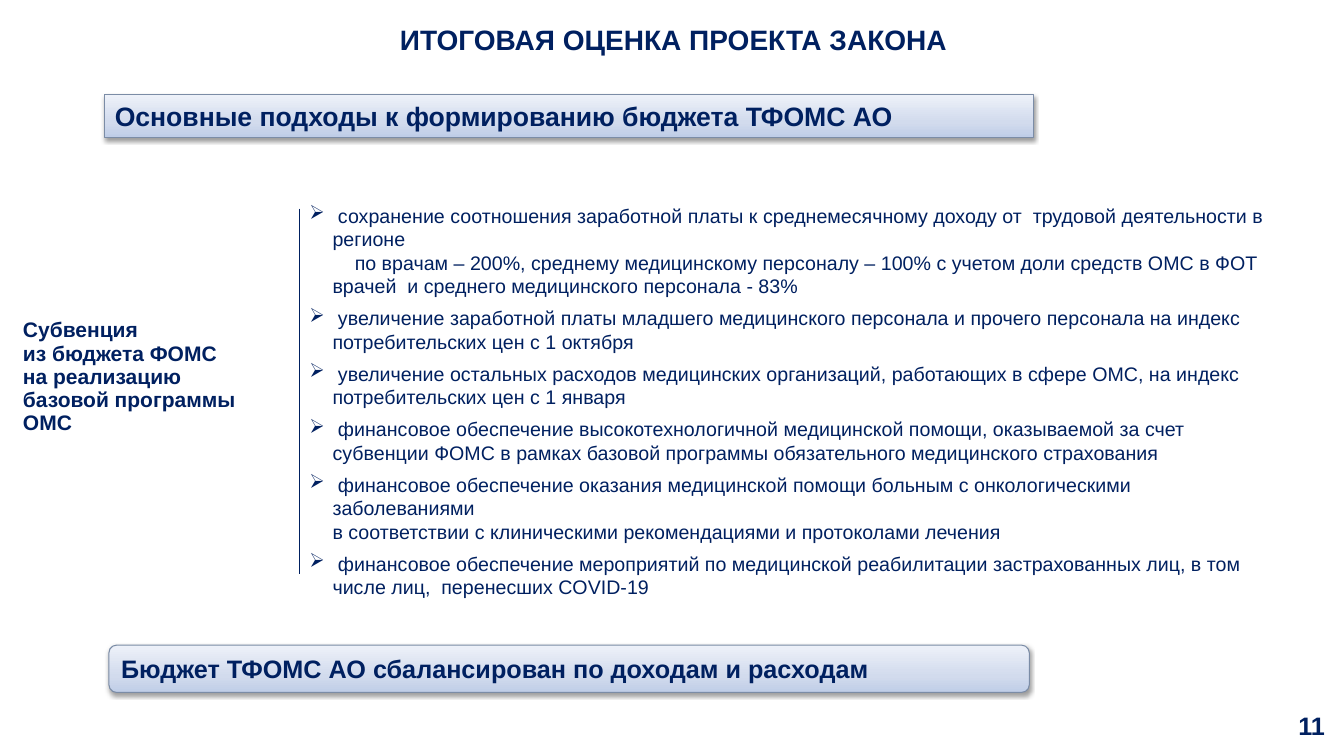
from dataclasses import dataclass

from pptx import Presentation
from pptx.dml.color import RGBColor
from pptx.enum.shapes import MSO_CONNECTOR, MSO_SHAPE
from pptx.enum.text import MSO_ANCHOR, MSO_AUTO_SIZE, PP_ALIGN
from pptx.oxml import parse_xml
from pptx.oxml.ns import nsdecls
from pptx.util import Emu, Pt

PX = 9144  # 100 px to the inch
FONT = "Arial"
NAVY = "002060"
BANNER_EDGE = "7B8CA6"
BANNER_STOPS = ((0, "BFCDE7"), (35, "D2DBED"), (100, "EDF1F9"))
HANG = 23
SUBLINE_TAB = 45


@dataclass(frozen=True)
class Box:
    left: int
    top: int
    width: int
    height: int


@dataclass(frozen=True)
class Label:
    box: Box
    paragraphs: tuple[str, ...]
    size: int
    bold: bool = True
    align: PP_ALIGN = PP_ALIGN.LEFT
    line_spacing: float | None = None
    bulleted: bool = False
    grows: bool = False


@dataclass(frozen=True)
class Banner:
    label: Label
    outline: MSO_SHAPE
    anchor: MSO_ANCHOR


APPROACHES = (
    " сохранение соотношения заработной платы к среднемесячному доходу от  трудовой "
    "деятельности в регионе\n\tпо врачам – 200%, среднему медицинскому персоналу – 100% "
    "с учетом доли средств ОМС в ФОТ врачей  и среднего медицинского персонала - 83%",
    " увеличение заработной платы младшего медицинского персонала и прочего персонала "
    "на индекс потребительских цен с 1 октября",
    " увеличение остальных расходов медицинских организаций, работающих в сфере ОМС, "
    "на индекс потребительских цен с 1 января",
    " финансовое обеспечение высокотехнологичной медицинской помощи, оказываемой за счет "
    "субвенции ФОМС в рамках базовой программы обязательного медицинского страхования",
    " финансовое обеспечение оказания медицинской помощи больным с онкологическими "
    "заболеваниями\nв соответствии с клиническими рекомендациями и протоколами лечения",
    " финансовое обеспечение мероприятий по медицинской реабилитации застрахованных лиц, "
    "в том числе лиц,  перенесших COVID-19",
)
SUBVENTION = ("Субвенция", "из бюджета ФОМС\nна реализацию\nбазовой программы ОМС")

LABELS = (
    Label(Box(68, 21, 1200, 47), ("ИТОГОВАЯ ОЦЕНКА ПРОЕКТА ЗАКОНА",), 20,
          align=PP_ALIGN.CENTER, line_spacing=0.92),
    Label(Box(13, 312, 276, 126), SUBVENTION, 15, line_spacing=0.92, grows=True),
    Label(Box(297, 197, 969, 382), APPROACHES, 14, bold=False, bulleted=True, grows=True),
    Label(Box(1013, 700, 311, 50), ("11",), 18, align=PP_ALIGN.RIGHT),
)
BANNERS = (
    Banner(Label(Box(108, 640, 913, 47),
                 ("Бюджет ТФОМС АО сбалансирован по доходам и расходам",), 18),
           MSO_SHAPE.ROUNDED_RECTANGLE, MSO_ANCHOR.MIDDLE),
    Banner(Label(Box(104, 94, 921, 42),
                 ("Основные подходы к формированию бюджета ТФОМС АО",), 19, grows=True),
           MSO_SHAPE.RECTANGLE, MSO_ANCHOR.TOP),
)


def px(length: int) -> Emu:
    return Emu(length * PX)


def frame(box: Box) -> tuple[Emu, ...]:
    return px(box.left), px(box.top), px(box.width), px(box.height)


def color(value: str) -> RGBColor:
    return RGBColor.from_string(value)


def add_bullet(paragraph) -> None:
    """Hang the paragraph on an arrow bullet, with a tab stop for its sub-line."""
    properties = paragraph._p.get_or_add_pPr()
    properties.set("marL", str(px(HANG)))
    properties.set("indent", str(px(-HANG)))
    properties.append(parse_xml(f'<a:buChar {nsdecls("a")} char="➢"/>'))
    properties.append(parse_xml(
        f'<a:tabLst {nsdecls("a")}><a:tab pos="{px(SUBLINE_TAB)}" algn="l"/></a:tabLst>'))


def write(text_frame, label: Label) -> None:
    text_frame.word_wrap = True
    if label.grows:
        text_frame.auto_size = MSO_AUTO_SIZE.SHAPE_TO_FIT_TEXT
    for number, text in enumerate(label.paragraphs):
        paragraph = text_frame.add_paragraph() if number else text_frame.paragraphs[0]
        paragraph.alignment = label.align
        if label.line_spacing:
            paragraph.line_spacing = label.line_spacing
        if label.bulleted:
            paragraph.space_after = Pt(6)
            add_bullet(paragraph)
        for line_number, line in enumerate(text.split("\n")):
            if line_number:
                paragraph.add_line_break()
            run = paragraph.add_run()
            run.text = line
            run.font.name = FONT
            run.font.size = Pt(label.size)
            run.font.bold = label.bold
            run.font.color.rgb = color(NAVY)


def add_label(slide, label: Label) -> None:
    write(slide.shapes.add_textbox(*frame(label.box)).text_frame, label)


def add_banner(slide, banner: Banner) -> None:
    shape = slide.shapes.add_shape(banner.outline, *frame(banner.label.box))
    shape.fill.gradient()
    shape.fill.gradient_angle = 90
    stops = "".join(f'<a:gs pos="{percent * 1000}"><a:srgbClr val="{value}"/></a:gs>'
                    for percent, value in BANNER_STOPS)
    gradient = shape._element.spPr.find(".//{*}gsLst")
    gradient.getparent().replace(
        gradient, parse_xml(f'<a:gsLst {nsdecls("a")}>{stops}</a:gsLst>'))
    shape.line.color.rgb = color(BANNER_EDGE)
    shape.line.width = Pt(0.75)
    shape.shadow.inherit = False
    shape._element.spPr.find("{*}effectLst").append(parse_xml(
        f'<a:outerShdw {nsdecls("a")} blurRad="{Pt(3.1)}" dist="{Pt(1.6)}" dir="5400000" '
        'rotWithShape="0"><a:srgbClr val="000000"><a:alpha val="38000"/></a:srgbClr>'
        '</a:outerShdw>'))
    shape.text_frame.vertical_anchor = banner.anchor
    write(shape.text_frame, banner.label)


def add_divider(slide, x: int, top: int, bottom: int) -> None:
    divider = slide.shapes.add_connector(
        MSO_CONNECTOR.STRAIGHT, px(x), px(top), px(x), px(bottom))
    divider.line.color.rgb = color(NAVY)
    divider.line.width = Pt(0.75)
    divider._element.spPr.append(parse_xml(f'<a:effectLst {nsdecls("a")}/>'))


def main() -> None:
    deck = Presentation()
    deck.slide_width, deck.slide_height = px(1333), px(750)
    slide = deck.slides.add_slide(deck.slide_layouts[6])
    for banner in BANNERS:
        add_banner(slide, banner)
    for label in LABELS:
        add_label(slide, label)
    add_divider(slide, 297, 207, 569)
    deck.save("out.pptx")


if __name__ == "__main__":
    main()
